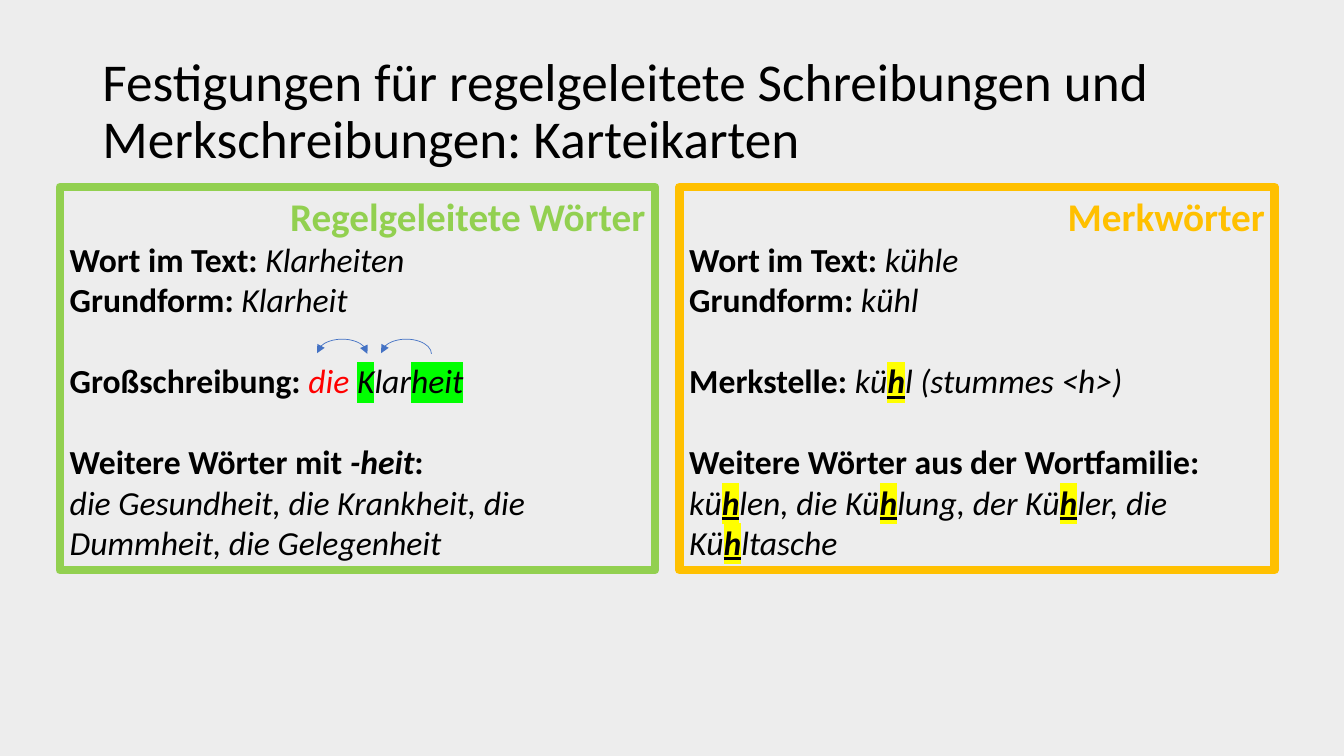
from lxml.etree import SubElement
from pptx import Presentation
from pptx.dml.color import RGBColor
from pptx.enum.shapes import MSO_SHAPE
from pptx.enum.text import MSO_ANCHOR, MSO_AUTO_SIZE, PP_ALIGN
from pptx.oxml.ns import qn
from pptx.util import Emu, Pt

THEME = {
    "font": "Calibri",
    "background": "EDEDED", "text": "000000", "article": "FF0000",
    "rule": "92D050", "memory": "FFC000", "arc": "4472C4",
    "signal": "00FF00", "trap": "FFFF00",
    "title_size": 38, "heading_size": 28, "body_size": 24,
    "section_gap": 29, "border": 6, "arc_line": 0.5,
}
STYLES = {
    "label": {"bold": True},
    "example": {"italic": True},
    "suffix": {"bold": True, "italic": True},
    "article": {"italic": True, "color": "article"},
    "signal": {"italic": True, "highlight": "signal"},
    "trap": {"bold": True, "italic": True, "underline": True, "highlight": "trap"},
}


def px(value):
    """Turn px (96 to the inch) into EMU."""
    return Emu(value * 9525)


def add_run(paragraph, text, size, color="text", highlight=None, **formats):
    run = paragraph.add_run()
    run.text = text
    formats.update(name=THEME["font"], size=Pt(THEME[size]))
    for name, value in formats.items():
        setattr(run.font, name, value)
    run.font.color.rgb = RGBColor.from_string(THEME[color])
    if highlight:
        properties = run._r.get_or_add_rPr()
        marker = SubElement(properties, qn("a:highlight"))
        SubElement(marker, qn("a:srgbClr")).set("val", THEME[highlight])
        properties.find(qn("a:solidFill")).addnext(marker)


presentation = Presentation()
presentation.slide_width, presentation.slide_height = px(1280), px(720)
slide = presentation.slides.add_slide(presentation.slide_layouts[5])
slide.background.fill.solid()
slide.background.fill.fore_color.rgb = RGBColor.from_string(THEME["background"])

# Title
title = slide.shapes.title
title_box = {"left": 88, "top": 38, "width": 1104, "height": 139}
for name, value in title_box.items():
    setattr(title, name, px(value))
title.text_frame.auto_size = MSO_AUTO_SIZE.NONE
title.text_frame.vertical_anchor = MSO_ANCHOR.MIDDLE
paragraph = title.text_frame.paragraphs[0]
paragraph.alignment = PP_ALIGN.LEFT
paragraph.line_spacing = 0.9
add_run(paragraph, "Festigungen für regelgeleitete Schreibungen und "
        "Merkschreibungen: Karteikarten", "title_size")

# Index cards: heading, colour, and sections of lines made of (text, style) pieces
cards = [
    ("Regelgeleitete Wörter", "rule", [
        [[("Wort im Text: ", "label"), ("Klarheiten", "example")],
         [("Grundform: ", "label"), ("Klarheit", "example")]],
        [[("Großschreibung: ", "label"), ("die ", "article"), ("K", "signal"),
          ("lar", "example"), ("heit", "signal")]],
        [[("Weitere Wörter mit ", "label"), ("-heit", "suffix"), (":", "label")],
         [("die Gesundheit, die Krankheit, die Dummheit, die Gelegenheit", "example")]],
    ]),
    ("Merkwörter", "memory", [
        [[("Wort im Text: ", "label"), ("kühle", "example")],
         [("Grundform: ", "label"), ("kühl", "example")]],
        [[("Merkstelle: ", "label"), ("kü", "example"), ("h", "trap"),
          ("l (stummes <h>)", "example")]],
        [[("Weitere Wörter aus der Wortfamilie:", "label")],
         [("kü", "example"), ("h", "trap"), ("len, die Kü", "example"), ("h", "trap"),
          ("lung, der Kü", "example"), ("h", "trap"), ("ler, die Kü", "example"),
          ("h", "trap"), ("ltasche", "example")]],
    ]),
]
for column, (heading, color, sections) in enumerate(cards):
    card = slide.shapes.add_textbox(px(57 + 590 * column), px(178), px(567), px(365))
    card.line.color.rgb = RGBColor.from_string(THEME[color])
    card.line.width = Pt(THEME["border"])
    frame = card.text_frame
    frame.word_wrap = True
    paragraph = frame.paragraphs[0]
    paragraph.alignment = PP_ALIGN.RIGHT
    add_run(paragraph, heading, "heading_size", color, bold=True)
    for section_number, section in enumerate(sections):
        for line_number, pieces in enumerate(section):
            paragraph = frame.add_paragraph()
            if section_number and not line_number:
                paragraph.space_before = Pt(THEME["section_gap"])
            for text, style in pieces:
                add_run(paragraph, text, "body_size", **STYLES[style])

# Arcs linking article, capital letter and suffix
for left, arrowheads in [(302, ["headEnd", "tailEnd"]), (363, ["headEnd"])]:
    arc = slide.shapes.add_shape(MSO_SHAPE.ARC, px(left), px(323), px(48), px(28))
    arc.adjustments[0] = 108.888
    arc.shadow.inherit = False
    arc.fill.background()
    arc.line.color.rgb = RGBColor.from_string(THEME["arc"])
    arc.line.width = Pt(THEME["arc_line"])
    for end in arrowheads:
        SubElement(arc.line._get_or_add_ln(), qn(f"a:{end}")).set("type", "triangle")

presentation.save("out.pptx")
